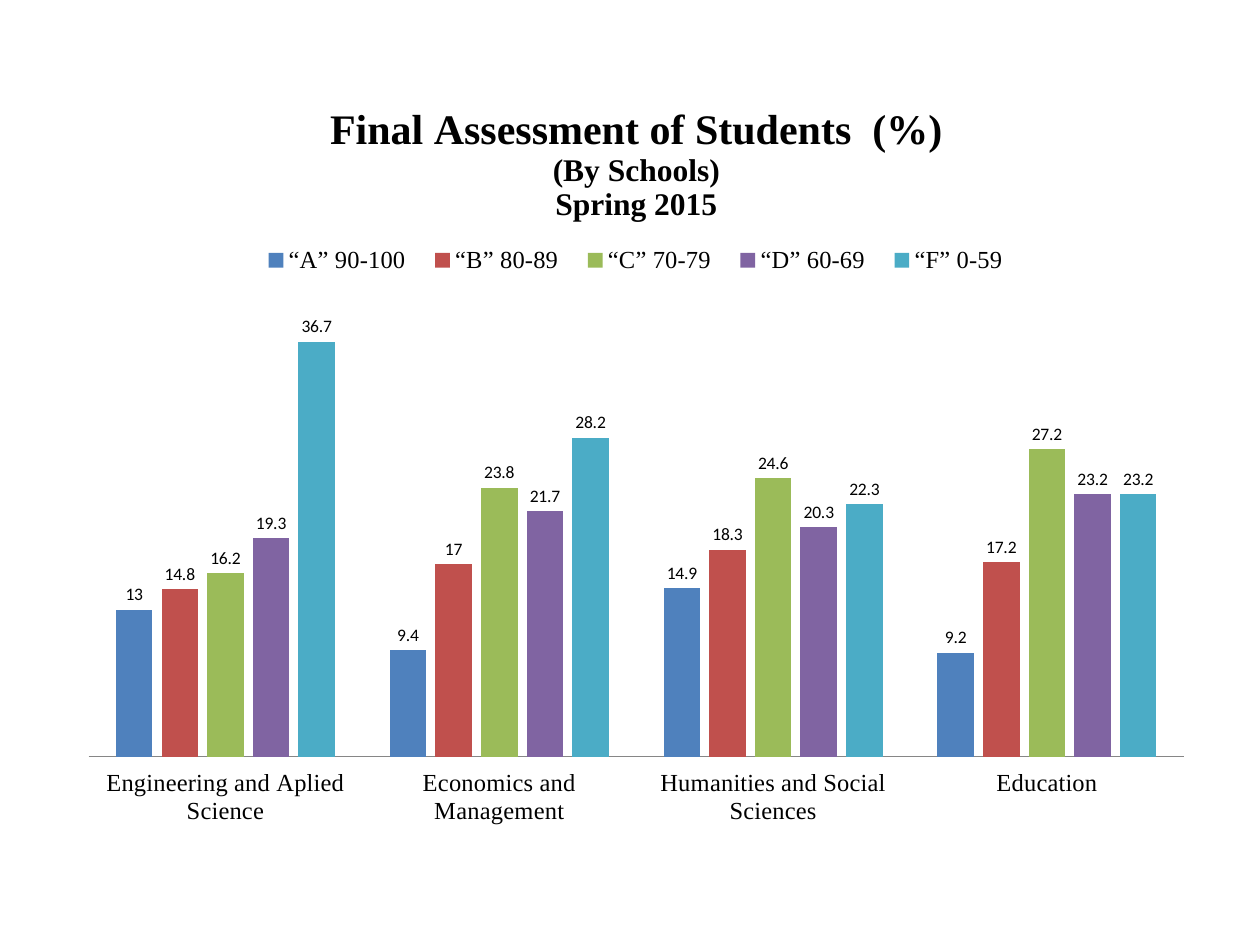
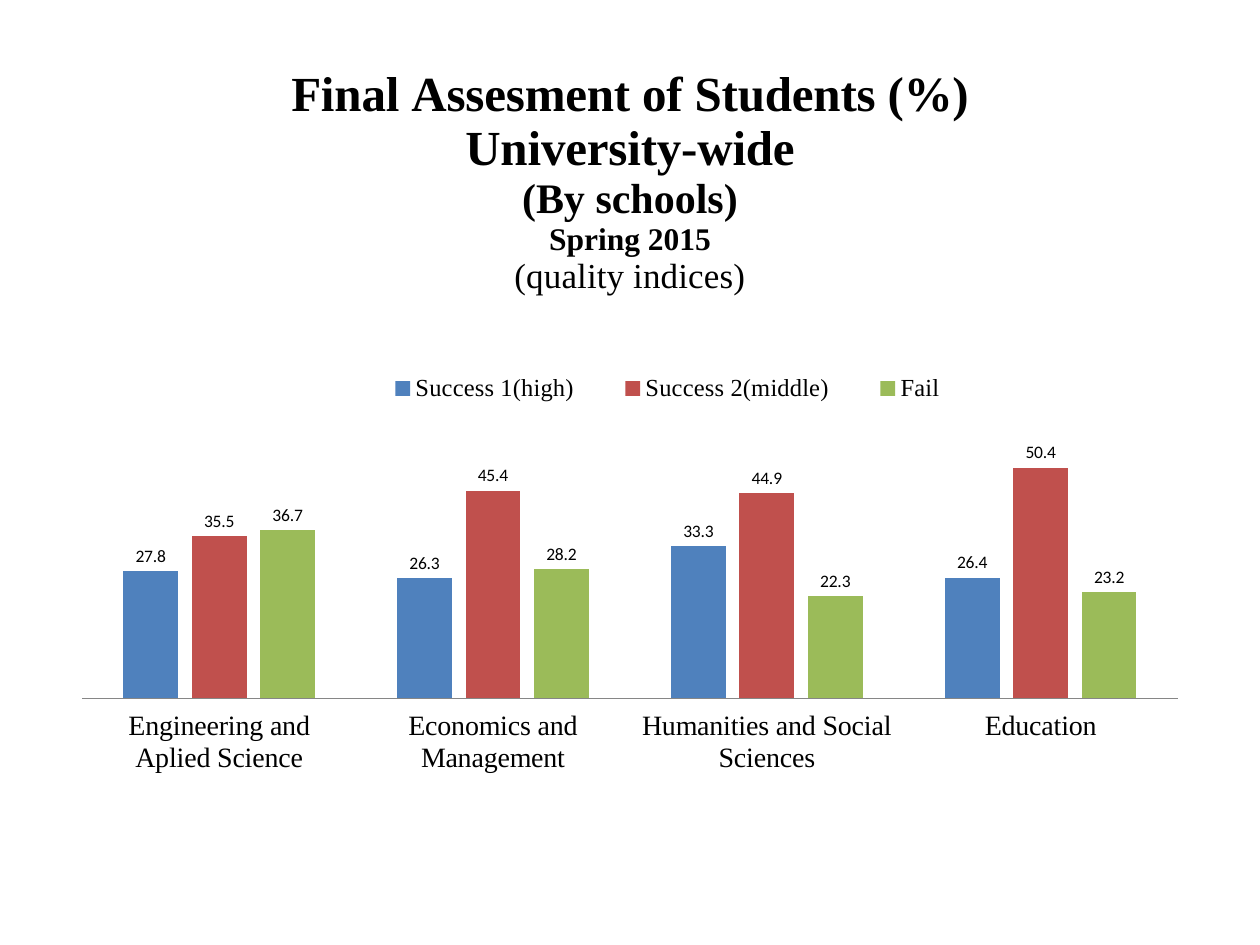
from dataclasses import dataclass

from lxml import etree
from pptx import Presentation
from pptx.chart.chart import Chart
from pptx.chart.data import CategoryChartData
from pptx.dml.color import RGBColor
from pptx.enum.chart import (XL_CHART_TYPE, XL_LABEL_POSITION, XL_LEGEND_POSITION,
                             XL_TICK_LABEL_POSITION, XL_TICK_MARK)
from pptx.oxml.ns import qn
from pptx.util import Inches, Pt

COLUMNS = XL_CHART_TYPE.COLUMN_CLUSTERED
LEGEND_TOP = XL_LEGEND_POSITION.TOP
OUTSIDE_END = XL_LABEL_POSITION.OUTSIDE_END
NO_TICKS = XL_TICK_MARK.NONE
LABELS_LOW = XL_TICK_LABEL_POSITION.LOW

# Shared look
COLORS = {
    "text": "000000",
    "axis": "868686",
    "blue": "4F81BD",
    "red": "C0504D",
    "green": "9BBB59",
    "purple": "8064A2",
    "aqua": "4BACC6",
}
SERIES_COLORS = ("blue", "red", "green", "purple", "aqua")
HEADING_FONT = "Times New Roman"
LABEL_FONT = "Calibri"
SCHOOLS = (
    "Engineering and Aplied Science",
    "Economics and Management",
    "Humanities and Social Sciences",
    "Education",
)


@dataclass(frozen=True)
class TitleLine:
    text: str
    size: int
    bold: bool = True
    space_before: int = 0


@dataclass(frozen=True)
class Area:
    """Left, top, width and height: inches on a slide, fractions in a chart."""
    left: float
    top: float
    width: float
    height: float


@dataclass(frozen=True)
class AssessmentChart:
    frame: Area
    plot: Area
    legend: Area
    title: tuple[TitleLine, ...]
    series: dict[str, tuple[float, ...]]
    school_size: int
    axis_maximum: int


ASSESSMENTS = (
    AssessmentChart(
        frame=Area(0.55, 0.62, 9, 6.15),
        plot=Area(0.017, 0.292, 0.966, 0.584),
        legend=Area(0.157, 0.205, 0.685, 0.06),
        title=(
            TitleLine("Final Assessment of Students  (%)", 24),
            TitleLine("(By Schools)", 18),
            TitleLine("Spring 2015", 18),
        ),
        series={
            "“A” 90-100": (13, 9.4, 14.9, 9.2),
            "“B” 80-89": (14.8, 17, 18.3, 17.2),
            "“C” 70-79": (16.2, 23.8, 24.6, 27.2),
            "“D” 60-69": (19.3, 21.7, 20.3, 23.2),
            "“F” 0-59": (36.7, 28.2, 22.3, 23.2),
        },
        school_size=14,
        axis_maximum=40,
    ),
    AssessmentChart(
        frame=Area(0.5, 0.31, 9, 6.39),
        plot=Area(0.017, 0.478, 0.966, 0.341),
        legend=Area(0.255, 0.404, 0.556, 0.06),
        title=(
            TitleLine("Final Assesment of Students (%)", 28),
            TitleLine("University-wide", 28),
            TitleLine("(By schools)", 24),
            TitleLine("Spring 2015", 18),
            TitleLine("(quality indices)", 20, bold=False, space_before=18),
        ),
        series={
            "Success 1(high)": (27.8, 26.3, 33.3, 26.4),
            "Success 2(middle)": (35.5, 45.4, 44.9, 50.4),
            "Fail": (36.7, 28.2, 22.3, 23.2),
        },
        school_size=16,
        axis_maximum=60,
    ),
)


def color(name: str) -> RGBColor:
    return RGBColor.from_string(COLORS[name])


def style_font(font, name: str, size: int, bold: bool = False) -> None:
    font.name = name
    font.size = Pt(size)
    font.bold = bold
    font.color.rgb = color("text")


def set_layout(parent, area: Area, following: tuple[str, ...], inner: bool = False) -> None:
    """Place a plot or legend by fractions of the chart."""
    for old in parent.findall(qn("c:layout")):
        parent.remove(old)
    layout = etree.Element(qn("c:layout"))
    manual = etree.SubElement(layout, qn("c:manualLayout"))
    settings = {"layoutTarget": "inner"} if inner else {}
    settings |= {"xMode": "edge", "yMode": "edge", "x": area.left, "y": area.top,
                 "w": area.width, "h": area.height}
    for tag, value in settings.items():
        etree.SubElement(manual, qn(f"c:{tag}")).set("val", str(value))
    next(parent.iterchildren(*map(qn, following))).addprevious(layout)


def write_title(chart: Chart, lines: tuple[TitleLine, ...]) -> None:
    chart.has_title = True
    chart.chart_title.include_in_layout = False
    frame = chart.chart_title.text_frame
    for index, line in enumerate(lines):
        para = frame.add_paragraph() if index else frame.paragraphs[0]
        para.text = line.text
        para.space_before = Pt(line.space_before)
        style_font(para.font, HEADING_FONT, line.size, line.bold)


def style_axes(chart: Chart, assessment: AssessmentChart) -> None:
    schools = chart.category_axis
    schools.major_tick_mark = NO_TICKS
    schools.minor_tick_mark = NO_TICKS
    schools.tick_label_position = LABELS_LOW
    schools.format.line.color.rgb = color("axis")
    schools.format.line.width = Pt(0.75)
    style_font(schools.tick_labels.font, HEADING_FONT, assessment.school_size)

    percent = chart.value_axis
    percent.minimum_scale = 0
    percent.maximum_scale = assessment.axis_maximum
    percent.has_major_gridlines = False
    percent.visible = False


def style_columns(chart: Chart) -> None:
    plot = chart.plots[0]
    plot.gap_width = 150
    plot.overlap = -25
    plot.vary_by_categories = False
    for series, name in zip(plot.series, SERIES_COLORS):
        series.format.fill.solid()
        series.format.fill.fore_color.rgb = color(name)
        labels = series.data_labels
        labels.show_value = True
        labels.position = OUTSIDE_END
        style_font(labels.font, LABEL_FONT, 10)


def draw_assessment(page, assessment: AssessmentChart) -> None:
    data = CategoryChartData()
    data.categories = SCHOOLS
    for name, values in assessment.series.items():
        data.add_series(name, values)
    frame = assessment.frame
    chart = page.shapes.add_chart(
        COLUMNS, Inches(frame.left), Inches(frame.top),
        Inches(frame.width), Inches(frame.height), data).chart
    style_font(chart.font, LABEL_FONT, 10)
    write_title(chart, assessment.title)
    style_axes(chart, assessment)
    style_columns(chart)

    # Legend and plot positions
    chart.has_legend = True
    legend = chart.legend
    legend.position = LEGEND_TOP
    legend.include_in_layout = False
    style_font(legend.font, HEADING_FONT, 14)
    chart_element = chart.element.find(qn("c:chart"))
    set_layout(chart_element.find(qn("c:legend")), assessment.legend,
               ("c:overlay", "c:txPr"))
    set_layout(chart_element.find(qn("c:plotArea")), assessment.plot,
               ("c:barChart",), inner=True)


def main() -> None:
    deck = Presentation()
    deck.slide_width = Inches(10)
    deck.slide_height = Inches(7.5)
    blank = deck.slide_layouts[6]
    for assessment in ASSESSMENTS:
        draw_assessment(deck.slides.add_slide(blank), assessment)
    deck.save("out.pptx")


if __name__ == "__main__":
    main()
